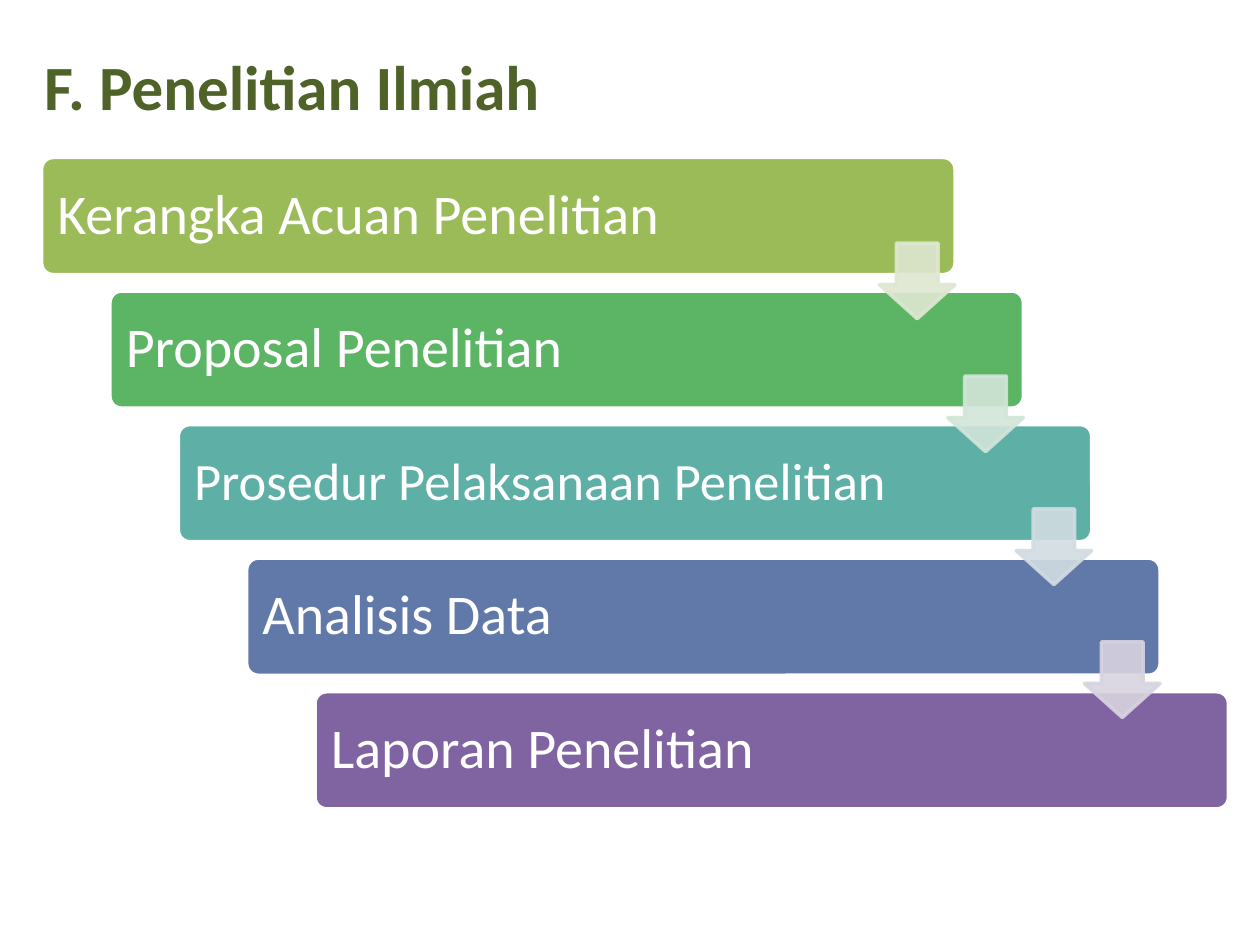
from lxml import etree
from pptx import Presentation
from pptx import util as u
from pptx.dml.color import RGBColor
from pptx.enum import shapes, text
from pptx.oxml.ns import qn

FONT = "Calibri"
WHITE = RGBColor(0xFF, 0xFF, 0xFF)
OLIVE = RGBColor(0x4F, 0x62, 0x28)
GREEN = RGBColor(0x9B, 0xBB, 0x59)
EMERALD = RGBColor(0x5C, 0xB5, 0x65)
TEAL = RGBColor(0x5E, 0xAF, 0xA6)
BLUE = RGBColor(0x61, 0x79, 0xA8)
PURPLE = RGBColor(0x80, 0x64, 0xA2)
PALE_GREEN = RGBColor(0xDE, 0xE7, 0xD1)
PALE_EMERALD = RGBColor(0xD2, 0xE5, 0xD9)
PALE_TEAL = RGBColor(0xD2, 0xDC, 0xE2)
PALE_PURPLE = RGBColor(0xD8, 0xD3, 0xE0)

STEPS = [
    ("Kerangka Acuan Penelitian", GREEN, 32),
    ("Proposal Penelitian", EMERALD, 32),
    ("Prosedur Pelaksanaan Penelitian", TEAL, 30),
    ("Analisis Data", BLUE, 32),
    ("Laporan Penelitian", PURPLE, 32),
]
ARROW_COLORS = [PALE_GREEN, PALE_EMERALD, PALE_TEAL, PALE_PURPLE]

STEP_RIGHT = 0.5425
STEP_DOWN = 1.06
ARROW_DOWN = 1.055


def write_text(frame, words, *, size, color, bold=False, spacing=None,
               anchor=text.MSO_ANCHOR.MIDDLE, wrap=True):
    frame.word_wrap = wrap
    frame.vertical_anchor = anchor
    para = frame.paragraphs[0]
    para.alignment = text.PP_ALIGN.LEFT
    if spacing:
        para.line_spacing = spacing
    span = para.add_run()
    span.text = words
    span.font.name = FONT
    span.font.size = u.Pt(size)
    span.font.bold = bold
    span.font.color.rgb = color


def set_opacity(fill_parent, percent):
    """Add an alpha value to the solid fill under the given element."""
    color = fill_parent.find(qn("a:solidFill")).find(qn("a:srgbClr"))
    etree.SubElement(color, qn("a:alpha")).set("val", str(percent * 1000))


class StaircaseSlide:
    def __init__(self, deck):
        self.page = deck.slides.add_slide(deck.slide_layouts[5])

    def title(self, words):
        box = self.page.shapes.title
        box.left, box.top = u.Inches(0.25), u.Inches(0.33)
        box.width, box.height = u.Inches(4.18), u.Inches(0.71)
        write_text(box.text_frame, words, size=36, color=OLIVE, bold=True,
                   anchor=text.MSO_ANCHOR.TOP, wrap=False)

    def shape(self, kind, left, top, width, height, fill, line):
        shape = self.page.shapes.add_shape(
            kind, u.Inches(left), u.Inches(top), u.Inches(width), u.Inches(height))
        shape.shadow.inherit = False
        shape.fill.solid()
        shape.fill.fore_color.rgb = fill
        shape.line.color.rgb = line
        shape.line.width = u.Pt(2)
        return shape

    def bar(self, left, top, words, fill, size):
        bar = self.shape(shapes.MSO_SHAPE.ROUNDED_RECTANGLE,
                         left, top, 7.25, 0.93, fill, WHITE)
        bar.adjustments[0] = 0.1
        bar.text_frame.margin_left = u.Inches(0.1)
        write_text(bar.text_frame, words, size=size, color=WHITE, spacing=0.9)

    def arrow(self, left, top, color):
        arrow = self.shape(shapes.MSO_SHAPE.DOWN_ARROW,
                           left, top, 0.6, 0.6, color, color)
        arrow.adjustments[0] = 0.55
        arrow.adjustments[1] = 0.45
        properties = arrow.element.spPr
        set_opacity(properties, 90)
        set_opacity(properties.find(qn("a:ln")), 90)


def main():
    deck = Presentation()
    deck.slide_width, deck.slide_height = u.Inches(10), u.Inches(7.5)
    slide = StaircaseSlide(deck)
    slide.title("F. Penelitian Ilmiah")
    for i, (words, fill, size) in enumerate(STEPS):
        slide.bar(0.33 + i * STEP_RIGHT, 1.25 + i * STEP_DOWN, words, fill, size)
    for i, color in enumerate(ARROW_COLORS):
        slide.arrow(6.98 + i * STEP_RIGHT, 1.93 + i * ARROW_DOWN, color)
    deck.save("out.pptx")


if __name__ == "__main__":
    main()
